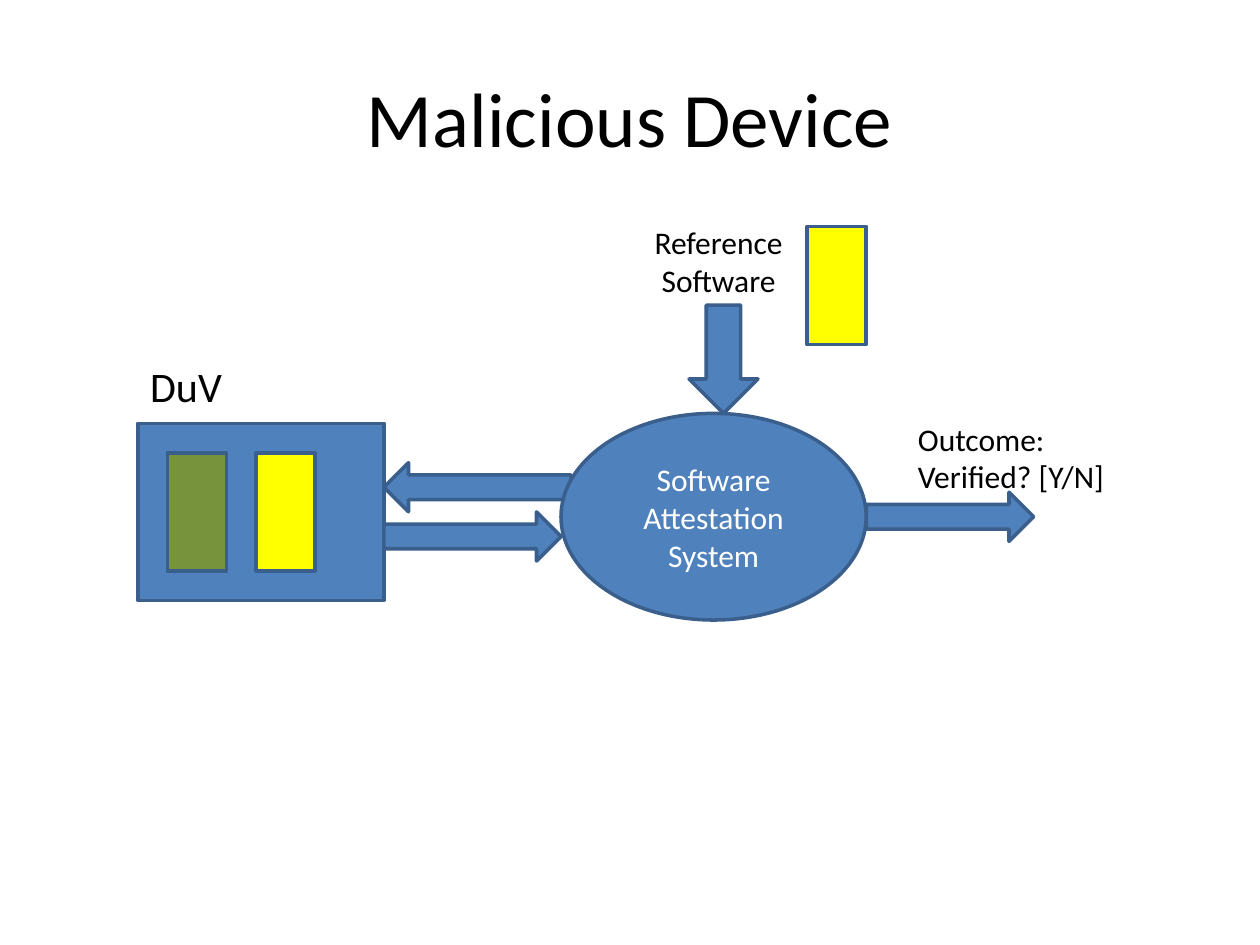
from pptx import Presentation
from pptx.dml.color import RGBColor
from pptx.enum import shapes, text
from pptx.util import Pt

BLUE = RGBColor(0x4F, 0x81, 0xBD)
EDGE = RGBColor(0x3A, 0x5F, 0x8C)
GREEN = RGBColor(0x77, 0x93, 0x3C)
YELLOW = RGBColor(0xFF, 0xFF, 0x00)
BLACK = RGBColor(0, 0, 0)
WHITE = RGBColor(0xFF, 0xFF, 0xFF)
KIND = shapes.MSO_SHAPE
LEFT, MID = text.PP_ALIGN.LEFT, text.PP_ALIGN.CENTER
TOP, CENTER = text.MSO_ANCHOR.TOP, text.MSO_ANCHOR.MIDDLE

deck = Presentation()
deck.slide_width, deck.slide_height = Pt(720), Pt(540)
slide = deck.slides.add_slide(deck.slide_layouts[6])


def write(item, words, size, color=BLACK, align=LEFT, anchor=TOP):
    frame = item.text_frame
    frame.word_wrap = True
    frame.vertical_anchor = anchor
    para = frame.paragraphs[0]
    para.alignment = align
    run = para.add_run()
    run.text = words
    run.font.name = "Calibri"
    run.font.size = Pt(size)
    run.font.color.rgb = color


def draw(kind, x, y, w, h, fill=BLUE):
    item = slide.shapes.add_shape(kind, Pt(x), Pt(y), Pt(w), Pt(h))
    item.shadow.inherit = False
    item.fill.solid()
    item.fill.fore_color.rgb = fill
    item.line.color.rgb = EDGE
    item.line.width = Pt(2)
    return item


# Device and arrows, behind the attestation system
draw(KIND.RECTANGLE, 78.75, 241.9, 140.6, 101.25)
draw(KIND.RIGHT_ARROW, 219.4, 292.5, 101.25, 28.1)
draw(KIND.DOWN_ARROW, 393.75, 174.4, 39.4, 61.9)
draw(KIND.RIGHT_ARROW, 495, 281.25, 95.6, 28.1)
draw(KIND.LEFT_ARROW, 219.4, 264.4, 106.9, 28.1)

# Attestation system
system = draw(KIND.OVAL, 320.6, 236.25, 174.4, 118.1)
write(system, "Software Attestation System", 18, WHITE, MID, CENTER)

# Software blocks: two in the device, one as reference
for x, y, fill in ((95.6, 258.75, GREEN), (146.25, 258.75, YELLOW),
                   (461.25, 129.4, YELLOW)):
    draw(KIND.RECTANGLE, x, y, 33.75, 67.5, fill)

# Title and labels
for words, x, y, w, h, size, align, anchor in (
        ("Malicious Device", 36, 21.6, 648, 90, 44, MID, CENTER),
        ("Reference Software", 365.6, 123.75, 90, 50.9, 18, MID, TOP),
        ("Outcome: Verified? [Y/N]", 517.5, 236.25, 123.75, 50.9, 18, LEFT, TOP),
        ("DuV", 78.75, 202.5, 78.75, 36.35, 24, LEFT, TOP)):
    label = slide.shapes.add_textbox(Pt(x), Pt(y), Pt(w), Pt(h))
    write(label, words, size, BLACK, align, anchor)

deck.save("out.pptx")
